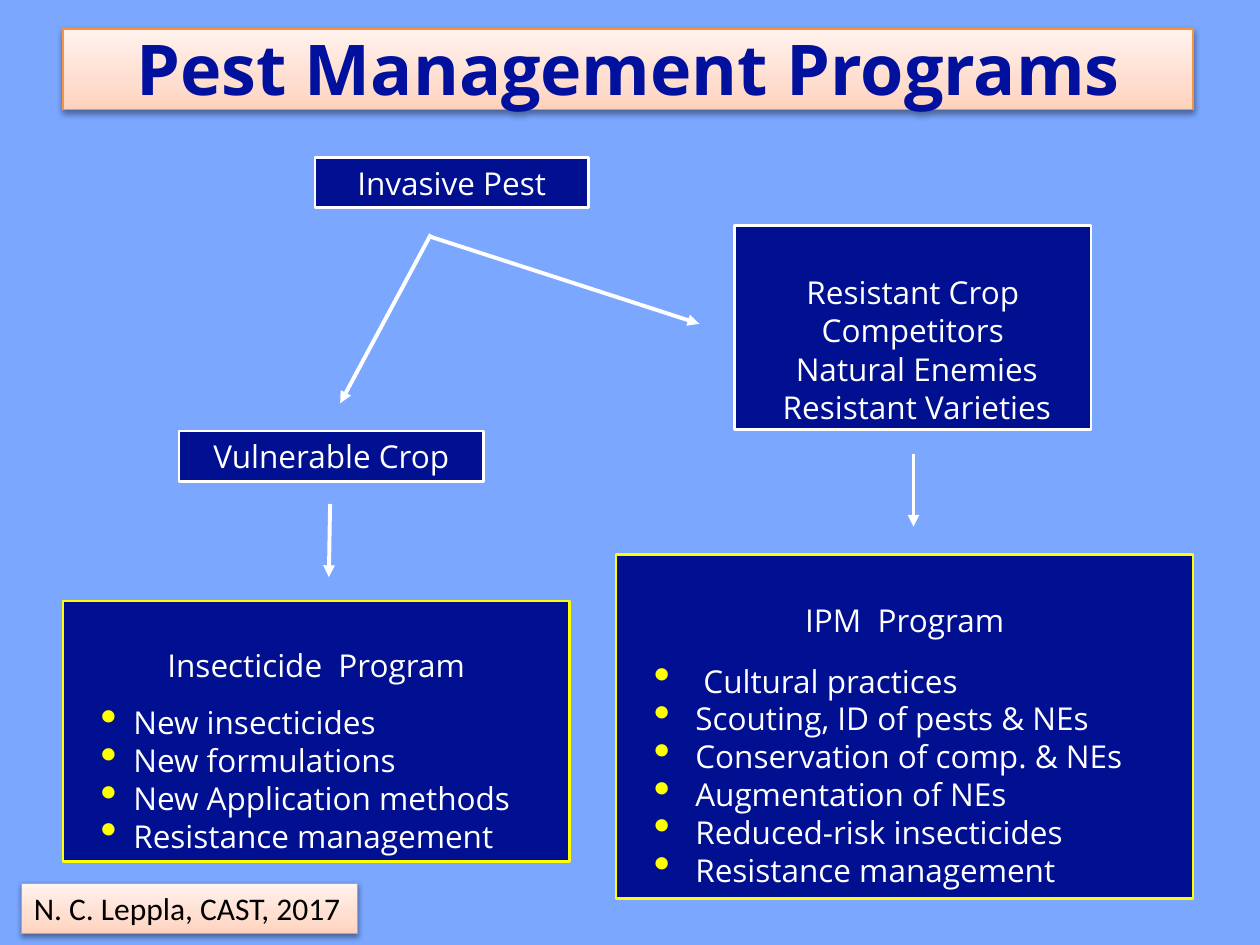
from dataclasses import dataclass
from typing import Optional

from lxml import etree
from pptx import Presentation, util as u
from pptx.dml.color import RGBColor
from pptx.enum import shapes, text
from pptx.oxml import parse_xml
from pptx.oxml.ns import nsdecls, qn


@dataclass(frozen=True)
class Theme:
    sky: str = "7BA7FF"
    navy: str = "010F91"
    title: str = "01109D"
    white: str = "FFFFFF"
    black: str = "000000"
    yellow: str = "FFFF00"
    orange: str = "F69240"
    peach: tuple = ((0, "FFD2BD"), (35, "FFDED0"), (100, "FFF2ED"))
    font: str = "Open Sans"
    note_font: str = "Calibri"
    body: float = 18
    heading: float = 40


@dataclass(frozen=True)
class Area:
    """Position and size in grid columns and rows."""
    col: float
    row: float
    cols: float
    rows: float


@dataclass(frozen=True)
class Box:
    """A navy box with centred lines, and bullets if it is a program."""
    area: Area
    lines: tuple
    pitch: Optional[float] = None
    top: Optional[float] = None
    bullets: tuple = ()
    margin: float = 0
    gap: float = 0


@dataclass(frozen=True)
class Arrow:
    start: tuple
    end: tuple


T = Theme()
COLS, ROWS = 100, 75
CELL = u.Inches(0.1)
BULLET_AT = 2  # columns from the text inset to the bullet

BOXES = (
    Box(Area(58.3, 17.9, 28.3, 16.2),
        ("Resistant Crop", "Competitors", " Natural Enemies",
         " Resistant Varieties"), pitch=22, top=3.7),
    Box(Area(14.2, 34.2, 24.2, 4), ("Vulnerable Crop",)),
    Box(Area(25, 12.5, 21.7, 4), ("Invasive Pest",)),
    Box(Area(48.9, 44, 45.8, 27.3), ("IPM  Program",), pitch=21.6, top=3.7,
        bullets=(" Cultural practices", "Scouting, ID of pests & NEs",
                 "Conservation of comp. & NEs", "Augmentation of NEs",
                 "Reduced-risk insecticides", "Resistance management"),
        margin=5.3, gap=13),
    Box(Area(5, 47.7, 40.2, 20.7), ("Insecticide  Program",), pitch=21.6,
        top=3.6,
        bullets=("New insecticides", "New formulations",
                 "New Application methods", "Resistance management"),
        margin=4.6, gap=11),
)
ARROWS = (
    Arrow((34.2, 18.6), (27, 32)),
    Arrow((34.2, 18.8), (55.5, 25.7)),
    Arrow((26.2, 40), (26.1, 45.8)),
    Arrow((72.5, 36), (72.5, 41.8)),
)


def grid(n: float) -> int:
    return round(n * CELL)


def rgb(color: str) -> RGBColor:
    return RGBColor.from_string(color)


def add_box(s, area: Area, line: str, width: float):
    sp = s.shapes.add_shape(shapes.MSO_SHAPE.RECTANGLE, grid(area.col),
                            grid(area.row), grid(area.cols), grid(area.rows))
    sp.shadow.inherit = False
    sp.fill.solid()
    sp.fill.fore_color.rgb = rgb(T.navy)
    sp.line.color.rgb = rgb(line)
    sp.line.width = u.Pt(width)
    tf = sp.text_frame
    tf.word_wrap = True
    tf.margin_left = tf.margin_right = grid(1)
    tf.margin_top = tf.margin_bottom = 0
    tf.vertical_anchor = text.MSO_ANCHOR.MIDDLE
    return sp


def add_text(tf, words: str, *, size: float = T.body, font: str = T.font,
             color: str = T.white, bold: bool = False,
             align=text.PP_ALIGN.CENTER, pitch: Optional[float] = None,
             before: float = 0, bullet_margin: float = 0) -> None:
    p = tf.paragraphs[0] if not tf.text else tf.add_paragraph()
    p.alignment = align
    if before:
        p.space_before = u.Pt(before)
    if pitch:
        p.line_spacing = u.Pt(pitch)
    if bullet_margin:
        pPr = p._p.get_or_add_pPr()
        pPr.set("marL", str(grid(bullet_margin)))
        pPr.set("indent", str(grid(BULLET_AT - bullet_margin)))
        color_el = etree.SubElement(pPr, qn("a:buClr"))
        etree.SubElement(color_el, qn("a:srgbClr"), val=T.yellow)
        etree.SubElement(pPr, qn("a:buSzPct"), val="150000")
        etree.SubElement(pPr, qn("a:buChar"), char="•")
    r = p.add_run()
    r.text = words
    r.font.size, r.font.name, r.font.bold = u.Pt(size), font, bold
    r.font.color.rgb = rgb(color)


def add_navy_box(s, box: Box) -> None:
    sp = add_box(s, box.area, T.yellow if box.bullets else T.white, 1.5)
    tf = sp.text_frame
    if box.top is not None:
        tf.vertical_anchor = text.MSO_ANCHOR.TOP
        tf.margin_top = grid(box.top)
    for line in box.lines:
        add_text(tf, line, pitch=box.pitch)
    for i, item in enumerate(box.bullets):
        add_text(tf, item, align=text.PP_ALIGN.LEFT, pitch=box.pitch,
                 before=0 if i else box.gap, bullet_margin=box.margin)


def add_banner(s, area: Area):
    """A peach gradient box with a soft shadow below."""
    sp = add_box(s, area, T.orange, 0.75)
    sp.fill.gradient()
    sp.fill.gradient_angle = 90
    spPr = sp._element.spPr
    stops = spPr.find(".//" + qn("a:gsLst"))
    for old in list(stops):
        stops.remove(old)
    for pos, color in T.peach:
        stop = etree.SubElement(stops, qn("a:gs"), pos=str(pos * 1000))
        etree.SubElement(stop, qn("a:srgbClr"), val=color)
    spPr.find(qn("a:effectLst")).append(parse_xml(
        f'<a:outerShdw {nsdecls("a")} blurRad="{u.Pt(3.1)}" '
        f'dist="{u.Pt(1.6)}" dir="5400000" rotWithShape="0">'
        f'<a:srgbClr val="{T.black}"><a:alpha val="38000"/></a:srgbClr>'
        '</a:outerShdw>'))
    return sp


def add_arrow(s, arrow: Arrow) -> None:
    c = s.shapes.add_connector(shapes.MSO_CONNECTOR.STRAIGHT,
                               *map(grid, arrow.start + arrow.end))
    c.line.color.rgb = rgb(T.white)
    c.line.width = u.Pt(2.25)
    etree.SubElement(c.line._get_or_add_ln(), qn("a:tailEnd"), type="triangle")
    etree.SubElement(c._element.spPr, qn("a:effectLst"))


def main() -> None:
    prs = Presentation()
    prs.slide_width, prs.slide_height = grid(COLS), grid(ROWS)
    s = prs.slides.add_slide(prs.slide_layouts[6])
    s.background.fill.solid()
    s.background.fill.fore_color.rgb = rgb(T.sky)

    # Flow of boxes and arrows
    for box in BOXES:
        add_navy_box(s, box)
    for arrow in ARROWS:
        add_arrow(s, arrow)

    # Title and source note
    title = add_banner(s, Area(5, 2.3, 89.7, 6.4))
    add_text(title.text_frame, "Pest Management Programs", size=T.heading,
             color=T.title, bold=True, pitch=46)
    note = add_banner(s, Area(1.7, 70.1, 26.7, 4))
    add_text(note.text_frame, "N. C. Leppla, CAST, 2017", font=T.note_font,
             color=T.black, align=text.PP_ALIGN.LEFT)

    prs.save("out.pptx")


if __name__ == "__main__":
    main()
